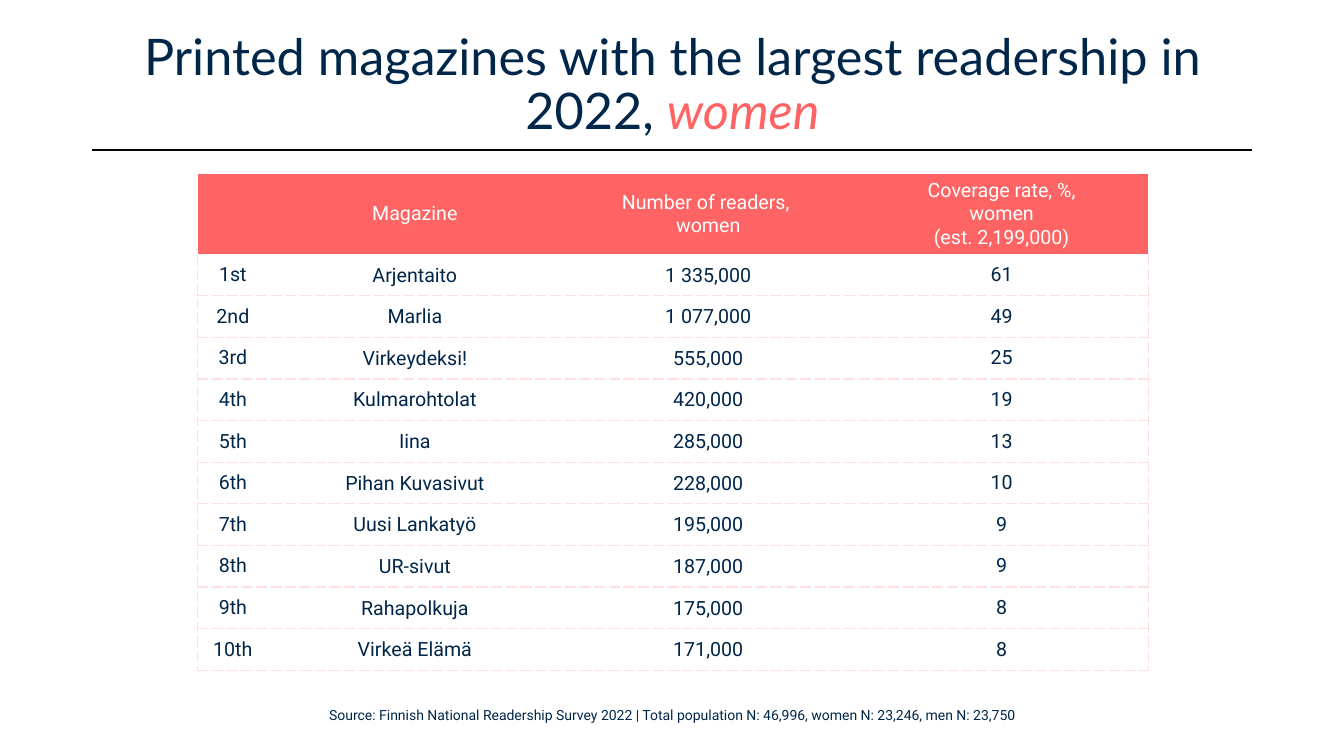
from lxml import etree
from pptx import Presentation
from pptx.dml.color import RGBColor
from pptx.enum import shapes, text
from pptx.oxml import ns
from pptx.util import Inches, Pt

COLORS = {
    "navy": "002649",
    "coral": "FF6464",
    "pink": "FFE0E0",
    "white": "FFFFFF",
    "black": "000000",
}

HEADS = [
    "",
    "Magazine",
    "Number of readers, \vwomen",
    "Coverage rate, %,\vwomen\v(est. 2,199,000)",
]
ROWS = [
    ("1st", "Arjentaito", "1 335,000", "61"),
    ("2nd", "Marlia", "1 077,000", "49"),
    ("3rd", "Virkeydeksi!", "555,000", "25"),
    ("4th", "Kulmarohtolat", "420,000", "19"),
    ("5th", "Iina", "285,000", "13"),
    ("6th", "Pihan Kuvasivut", "228,000", "10"),
    ("7th", "Uusi Lankatyö", "195,000", "9"),
    ("8th", "UR-sivut", "187,000", "9"),
    ("9th", "Rahapolkuja", "175,000", "8"),
    ("10th", "Virkeä Elämä", "171,000", "8"),
]
WIDTHS = [0.7, 2.91, 2.91, 2.91]
HEAD_H, ROW_H = 0.78, 0.413
SOURCE = ("Source: Finnish National Readership Survey 2022 | "
          "Total population N: 46,996, women N: 23,246, men N: 23,750")


def color(name):
    return RGBColor.from_string(COLORS[name])


def style(font, face, size, tint):
    font.name = face
    font.size = Pt(size)
    font.color.rgb = color(tint)


def add_title(slide):
    title = slide.shapes.title
    title.left, title.top = Inches(0.92), Inches(0.32)
    title.width, title.height = Inches(11.5), Inches(1.07)
    frame = title.text_frame
    frame.vertical_anchor = text.MSO_ANCHOR.MIDDLE
    para = frame.paragraphs[0]
    para.alignment = text.PP_ALIGN.CENTER
    para.line_spacing = 0.9
    parts = [
        ("Printed magazines with the largest readership in 2022, ", "navy"),
        ("women", "coral"),
    ]
    for words, tint in parts:
        run = para.add_run()
        run.text = words
        style(run.font, "Lato", 36, tint)
        run.font.italic = tint == "coral"


def add_rule(slide):
    y = Inches(1.49)
    rule = slide.shapes.add_connector(
        shapes.MSO_CONNECTOR.STRAIGHT, Inches(0.91), y, Inches(12.42), y)
    rule.line.color.rgb = color("black")
    rule.line.width = Pt(1)
    etree.SubElement(rule._element.spPr, ns.qn("a:effectLst"))


def set_edges(cell, dashed):
    """Dash the named sides of a cell and clear the others."""
    props = cell._tc.get_or_add_tcPr()
    for side in ("L", "R", "T", "B"):
        line = etree.SubElement(props, ns.qn("a:ln" + side), w=str(Pt(1)))
        if side in dashed:
            fill = etree.SubElement(line, ns.qn("a:solidFill"))
            etree.SubElement(fill, ns.qn("a:srgbClr"), val=COLORS["pink"])
            etree.SubElement(line, ns.qn("a:prstDash"), val="sysDash")
        else:
            etree.SubElement(line, ns.qn("a:noFill"))


def fill_cell(cell, words, tint):
    cell.text_frame.text = words
    cell.vertical_anchor = text.MSO_ANCHOR.MIDDLE
    para = cell.text_frame.paragraphs[0]
    para.alignment = text.PP_ALIGN.CENTER
    style(para.font, "Roboto", 14, tint)
    for run in para.runs:
        style(run.font, "Roboto", 14, tint)
        run.font.bold = False


def add_ranks(slide):
    height = HEAD_H + ROW_H * len(ROWS)
    table = slide.shapes.add_table(
        len(ROWS) + 1, len(HEADS), Inches(1.96), Inches(1.73),
        Inches(sum(WIDTHS)), Inches(height)).table
    table.horz_banding = False
    for col, width in zip(table.columns, WIDTHS):
        col.width = Inches(width)

    last = len(HEADS) - 1
    for r, row in enumerate([HEADS] + ROWS):
        table.rows[r].height = Inches(ROW_H if r else HEAD_H)
        for c, words in enumerate(row):
            cell = table.cell(r, c)
            fill_cell(cell, words, "navy" if r else "white")
            if r == 0:
                set_edges(cell, "")
                cell.fill.solid()
                cell.fill.fore_color.rgb = color("coral")
                continue
            sides = "B" if r == 1 else "TB"
            sides += {0: "L", last: "R"}.get(c, "")
            set_edges(cell, sides)
            cell.fill.background()
            if 0 < c < last:
                cell.margin_left = cell.margin_right = Inches(0.01)
                cell.margin_top, cell.margin_bottom = Inches(0.01), 0


def add_source(slide):
    box = slide.shapes.add_textbox(
        Inches(3.04), Inches(6.96), Inches(7.25), Inches(0.27))
    frame = box.text_frame
    frame.text = SOURCE
    frame.word_wrap = False
    frame.auto_size = text.MSO_AUTO_SIZE.SHAPE_TO_FIT_TEXT
    para = frame.paragraphs[0]
    para.alignment = text.PP_ALIGN.CENTER
    style(para.runs[0].font, "Roboto", 10, "navy")


def main():
    deck = Presentation()
    deck.slide_width, deck.slide_height = Inches(13.33), Inches(7.5)
    slide = deck.slides.add_slide(deck.slide_layouts[5])

    # Heading
    add_rule(slide)
    add_title(slide)
    # Ranking and its source
    add_ranks(slide)
    add_source(slide)

    deck.save("out.pptx")


if __name__ == "__main__":
    main()
